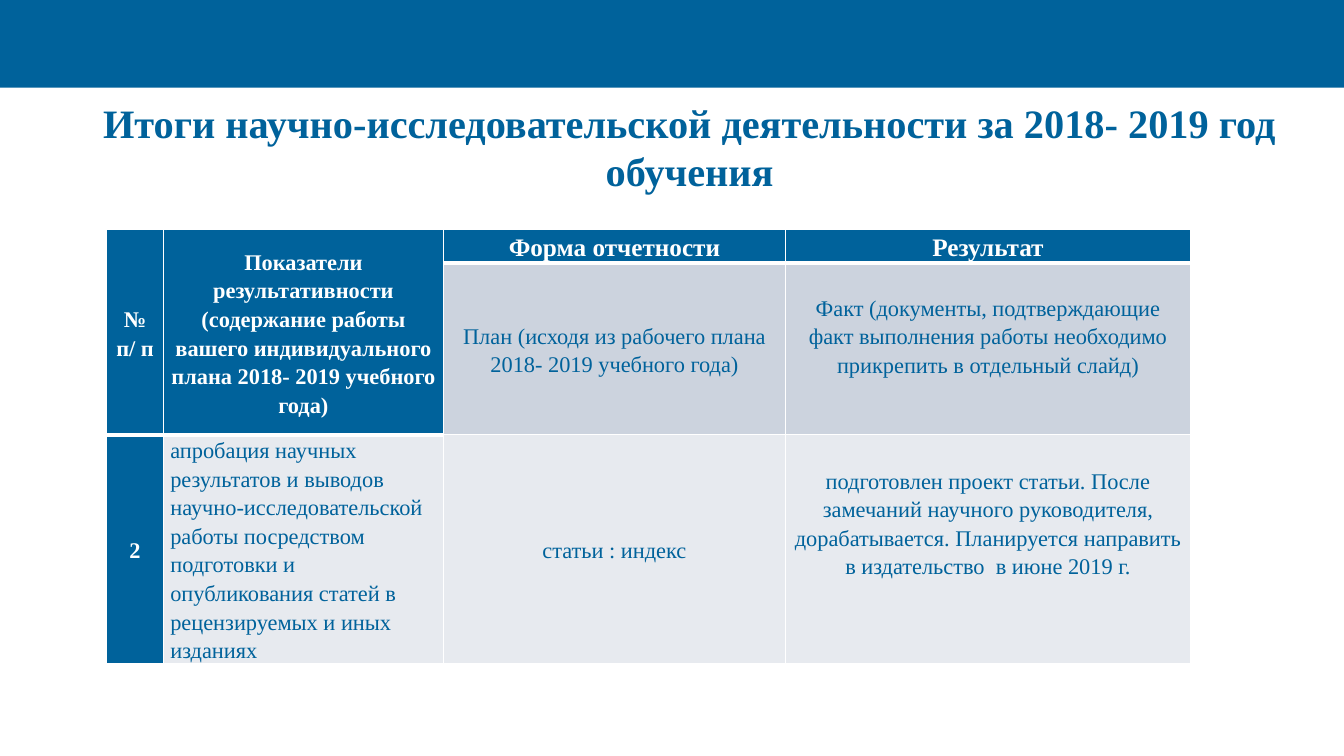
import pptx
import pptx.dml.color
import pptx.enum.shapes
import pptx.enum.text
import pptx.oxml.ns
import pptx.util
from lxml import etree

Inches, Pt = pptx.util.Inches, pptx.util.Pt
ALIGN = pptx.enum.text.PP_ALIGN
ANCHOR = pptx.enum.text.MSO_ANCHOR
FONT = "Times New Roman"
COLORS = {"blue": "00629B", "white": "FFFFFF", "band": "CCD3DE", "light": "E7EAEF"}

COL_WIDTHS = [0.56, 2.78, 3.39, 4.02]
ROW_HEIGHTS = [0.33, 1.7, 2.25]
# (row, column): text, fill
CELLS = {
    (0, 0): ("№ п/ п", "blue"),
    (0, 1): ("Показатели результативности\n(содержание работы вашего "
             "индивидуального плана 2018- 2019 учебного года)", "blue"),
    (0, 2): ("Форма отчетности", "blue"),
    (0, 3): ("Результат", "blue"),
    (1, 2): ("План (исходя из рабочего плана 2018- 2019 учебного года)", "band"),
    (1, 3): ("Факт (документы, подтверждающие факт выполнения работы "
             "необходимо прикрепить в отдельный слайд)", "band"),
    (2, 0): ("2", "blue"),
    (2, 1): ("апробация научных результатов и выводов научно-исследовательской "
             "работы посредством подготовки и опубликования статей в "
             "рецензируемых и иных изданиях", "light"),
    (2, 2): ("статьи : индекс", "light"),
    (2, 3): ("подготовлен проект статьи. После замечаний научного руководителя, "
             "дорабатывается. Планируется направить в издательство  в июне 2019 г.",
             "light"),
}
SUBHEADS = [(0, 2), (0, 3)]
LEFT_ALIGNED = [(2, 1)]
BOTTOM_MARGINS = {(1, 3): 0.27, (2, 3): 0.53}


def rgb(name):
    return pptx.dml.color.RGBColor.from_string(COLORS[name])


def format_paragraph(p, size, color, bold, align=ALIGN.CENTER):
    p.alignment = align
    for r in p.runs:
        r.font.name = FONT
        r.font.size = Pt(size)
        r.font.bold = bold
        r.font.color.rgb = rgb(color)


def add_band(slide, left, top, width, height):
    sp = slide.shapes.add_shape(pptx.enum.shapes.MSO_SHAPE.RECTANGLE,
                                Inches(left), Inches(top), Inches(width), Inches(height))
    sp.shadow.inherit = False
    sp.fill.solid()
    sp.fill.fore_color.rgb = rgb("blue")
    sp.line.fill.background()


def set_title(slide, text, left, top, width, height):
    sp = slide.shapes.title
    sp.left, sp.top = Inches(left), Inches(top)
    sp.width, sp.height = Inches(width), Inches(height)
    tf = sp.text_frame
    tf.text = text
    tf.word_wrap = True
    tf.auto_size = pptx.enum.text.MSO_AUTO_SIZE.NONE
    tf.vertical_anchor = ANCHOR.MIDDLE
    format_paragraph(tf.paragraphs[0], 28.8, "blue", True)


def set_borders(cell, bottom):
    """White lines on all four sides; they must precede the cell's fill in the XML."""
    tc_pr = cell._tc.get_or_add_tcPr()
    qn = pptx.oxml.ns.qn
    for i, (side, width) in enumerate([("L", 1), ("R", 1), ("T", 1), ("B", bottom)]):
        ln = etree.Element(qn(f"a:ln{side}"), w=str(Pt(width)))
        fill = etree.SubElement(ln, qn("a:solidFill"))
        etree.SubElement(fill, qn("a:srgbClr"), val=COLORS["white"])
        tc_pr.insert(i, ln)


def fill_cell(cell, key, text, fill):
    header = fill == "blue"
    subhead = key in SUBHEADS
    left_aligned = key in LEFT_ALIGNED
    cell.fill.solid()
    cell.fill.fore_color.rgb = rgb(fill)
    cell.margin_left = cell.margin_right = Inches(0.07)
    cell.margin_top = 0
    cell.margin_bottom = Inches(BOTTOM_MARGINS.get(key, 0))
    cell.vertical_anchor = ANCHOR.TOP if subhead or left_aligned else ANCHOR.MIDDLE
    cell.text_frame.text = text
    for p in cell.text_frame.paragraphs:
        p.line_spacing = 1.15
        format_paragraph(p, 18 if subhead else 16, "white" if header else "blue", header,
                         ALIGN.LEFT if left_aligned else ALIGN.CENTER)


def add_results_table(slide, left, top):
    frame = slide.shapes.add_table(len(ROW_HEIGHTS), len(COL_WIDTHS), Inches(left), Inches(top),
                                   Inches(sum(COL_WIDTHS)), Inches(sum(ROW_HEIGHTS)))
    table = frame.table
    for column, width in zip(table.columns, COL_WIDTHS):
        column.width = Inches(width)
    for row, height in zip(table.rows, ROW_HEIGHTS):
        row.height = Inches(height)
    for c in (0, 1):
        table.cell(0, c).merge(table.cell(1, c))
    for key, (text, fill) in CELLS.items():
        fill_cell(table.cell(*key), key, text, fill)
    for r in range(len(ROW_HEIGHTS)):
        for c in range(len(COL_WIDTHS)):
            under_header = r == 0 or (r == 1 and c < 2)
            set_borders(table.cell(r, c), 3 if under_header else 1)


def main():
    prs = pptx.Presentation()
    prs.slide_width, prs.slide_height = Inches(13.33), Inches(7.5)
    slide = prs.slides.add_slide(prs.slide_layouts[5])
    add_band(slide, 0, 0, 13.33, 0.87)
    set_title(slide, "Итоги научно-исследовательской деятельности за 2018- 2019 год обучения",
              0.84, 1, 12, 0.9)
    add_results_table(slide, 1.06, 2.28)
    prs.save("out.pptx")


if __name__ == "__main__":
    main()
